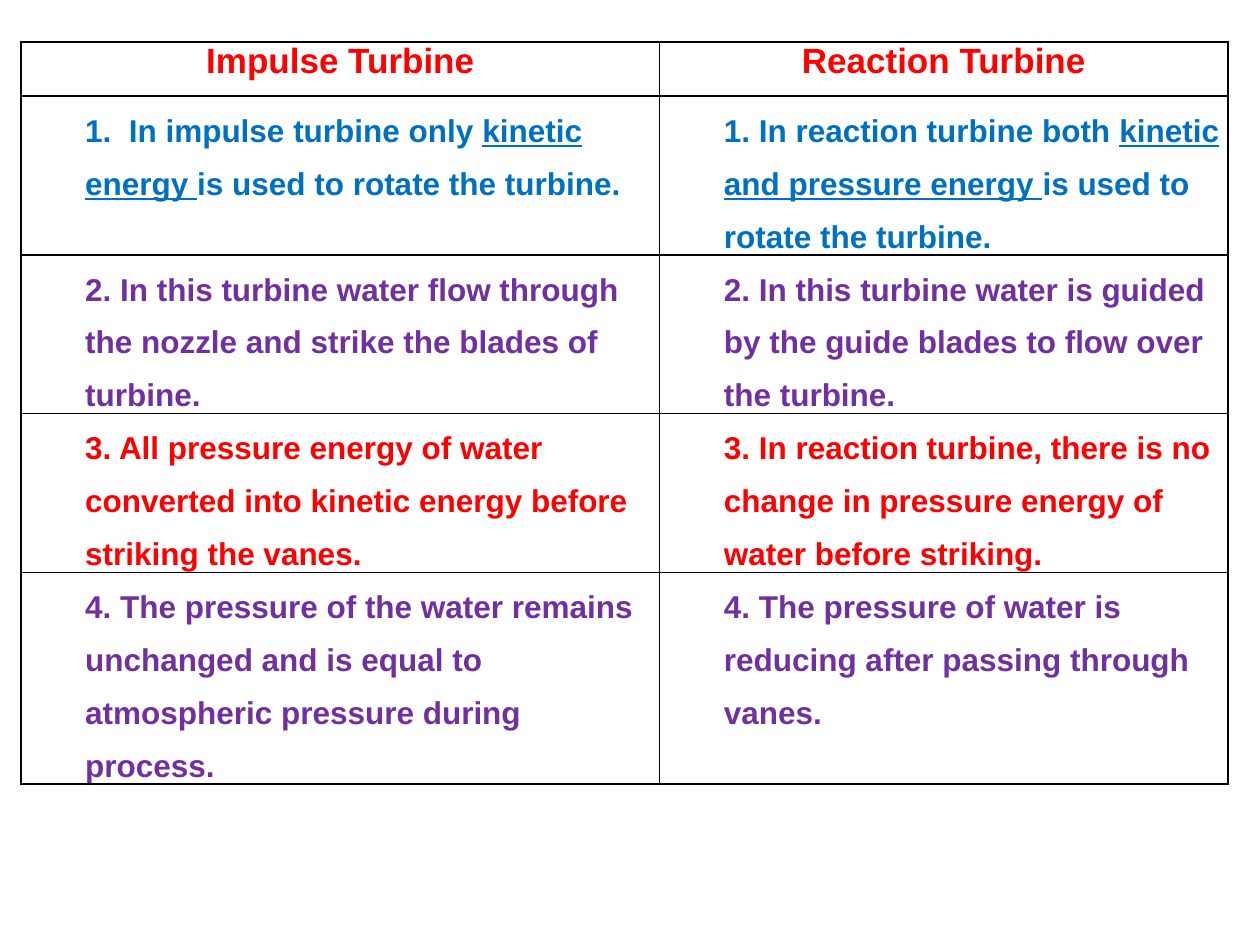
from typing import NamedTuple

from lxml.etree import SubElement
from pptx import Presentation
from pptx.dml.color import RGBColor
from pptx.enum.text import PP_ALIGN as Align
from pptx.oxml.ns import qn
from pptx.util import Pt

RED, BLUE, PURPLE = "FF0000", "0070C0", "7030A0"
WHITE, BLACK = "FFFFFF", "000000"
COLUMN_WIDTHS = (365, 324.7)
ROW_HEIGHTS = (31, 70.6, 72, 77.8, 103.7)


class Comparison(NamedTuple):
    color: str
    impulse: str
    reaction: str


# Underlined words stand between asterisks
COMPARISONS = [
    Comparison(BLUE,
               "1.  In impulse turbine only *kinetic energy *is used to rotate the turbine.",
               "1. In reaction turbine both *kinetic and pressure energy *"
               "is used to rotate the turbine."),
    Comparison(PURPLE,
               "2. In this turbine water flow through the nozzle and strike "
               "the blades of turbine.",
               "2. In this turbine water is guided by the guide blades to flow "
               "over the turbine."),
    Comparison(RED,
               "3. All pressure energy of water converted into kinetic energy "
               "before striking the vanes.",
               "3. In reaction turbine, there is no change in pressure energy of "
               "water before striking."),
    Comparison(PURPLE,
               "4. The pressure of the water remains unchanged and is equal to "
               "atmospheric pressure during process.",
               "4. The pressure of water is reducing after passing through vanes."),
]


def rgb(color: str) -> RGBColor:
    return RGBColor.from_string(color)


def write_text(cell, text: str, *, color: str, size: float = 18, align=None,
               indent: float = 0, line_spacing: float = 1) -> None:
    paragraph = cell.text_frame.paragraphs[0]
    paragraph.alignment = align
    paragraph.line_spacing = line_spacing
    if indent:
        paragraph.level = 1
        properties = paragraph._p.get_or_add_pPr()
        properties.set("marL", str(Pt(indent)))
        properties.set("indent", "0")
    for index, part in enumerate(text.split("*")):
        run = paragraph.add_run()
        run.text = part
        font = run.font
        font.name, font.size, font.bold = "Arial", Pt(size), True
        font.underline = index % 2 == 1
        font.color.rgb = rgb(color)


def style_cell(cell, border_width: float = 1) -> None:
    cell.margin_left = cell.margin_right = Pt(0.7)
    cell.margin_top = cell.margin_bottom = 0
    properties = cell._tc.get_or_add_tcPr()
    for side in ("lnL", "lnR", "lnT", "lnB"):
        border = SubElement(properties, qn(f"a:{side}"), w=str(Pt(border_width)))
        fill = SubElement(border, qn("a:solidFill"))
        SubElement(fill, qn("a:srgbClr"), val=BLACK)
    cell.fill.solid()
    cell.fill.fore_color.rgb = rgb(WHITE)


def add_comparison_table(slide) -> None:
    frame = slide.shapes.add_table(
        len(ROW_HEIGHTS), len(COLUMN_WIDTHS), Pt(12), Pt(24),
        Pt(sum(COLUMN_WIDTHS)), Pt(sum(ROW_HEIGHTS)))
    table = frame.table
    for column, width in zip(table.columns, COLUMN_WIDTHS):
        column.width = Pt(width)
    for row, height in zip(table.rows, ROW_HEIGHTS):
        row.height = Pt(height)
    for cell in table.iter_cells():
        style_cell(cell)

    # Header row
    for column, title in enumerate(("Impulse Turbine", "Reaction Turbine")):
        write_text(table.cell(0, column), title, color=RED, size=20, align=Align.CENTER)

    # Numbered differences
    for row, comparison in enumerate(COMPARISONS, start=1):
        for column, text in enumerate((comparison.impulse, comparison.reaction)):
            write_text(table.cell(row, column), text, color=comparison.color,
                       indent=36, line_spacing=1.5)


def main() -> None:
    presentation = Presentation()
    presentation.slide_width, presentation.slide_height = Pt(720), Pt(540)
    slide = presentation.slides.add_slide(presentation.slide_layouts[6])
    add_comparison_table(slide)
    presentation.save("out.pptx")


if __name__ == "__main__":
    main()
